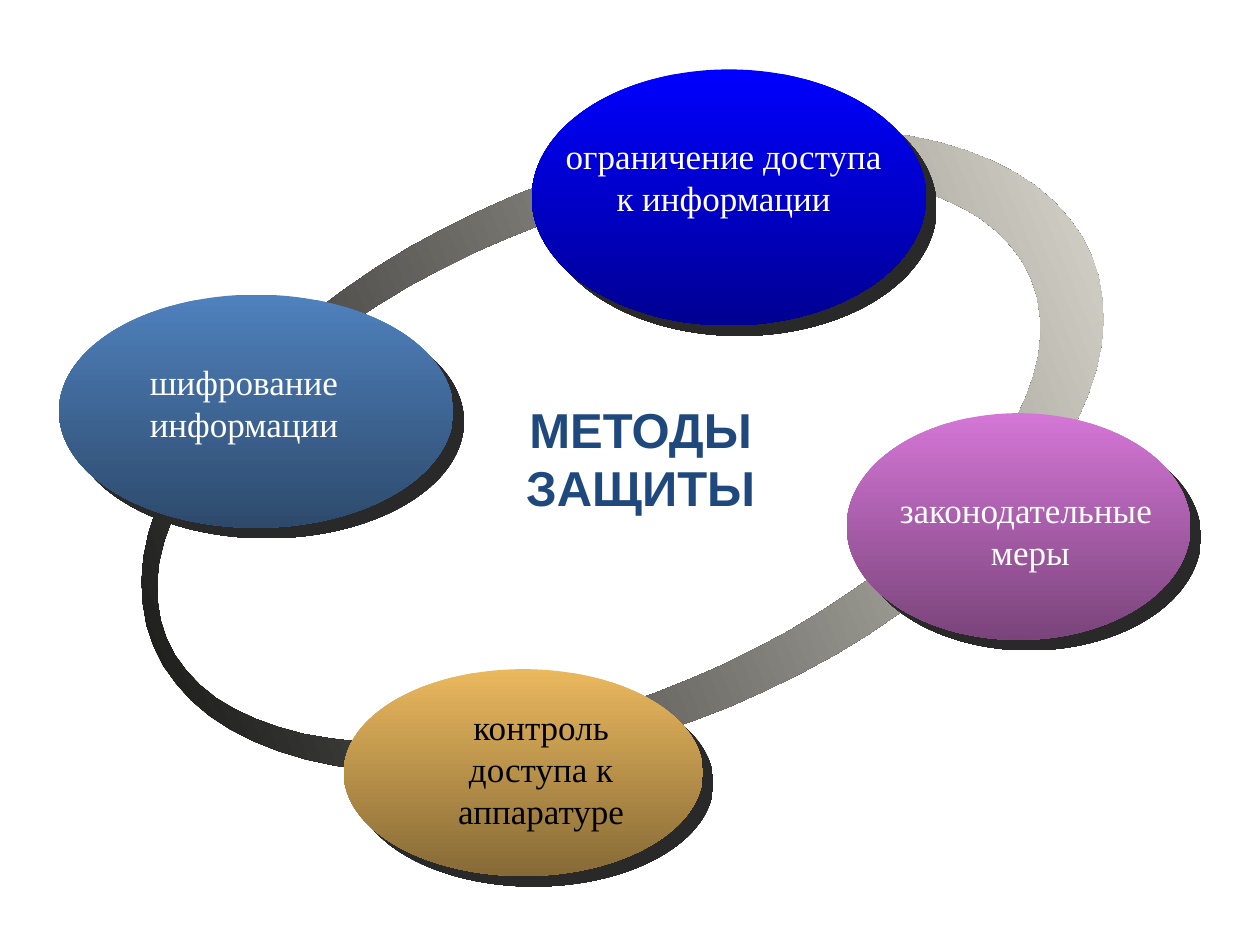
from dataclasses import dataclass
from math import cos, pi, sin

from lxml.etree import SubElement as Sub
from pptx import Presentation as Deck
from pptx.dml.color import RGBColor as Rgb
from pptx.enum.shapes import MSO_SHAPE as Kind
from pptx.enum.text import MSO_AUTO_SIZE as Fit, PP_ALIGN as Align
from pptx.oxml.ns import qn
from pptx.util import Cm, Pt


@dataclass(frozen=True)
class Theme:
    white: str = "FFFFFF"
    black: str = "000000"
    navy: str = "1F497D"
    sand: str = "EEECE1"
    blue: str = "0000FF"
    steel: str = "4F81BD"
    gold: str = "EAB85E"
    pink: str = "D476D6"
    shadow: str = "292929"
    shade: int = 28200
    serif: str = "Times New Roman"
    sans: str = "Arial"
    body: int = 20
    head: int = 28


class Page:
    def __init__(self, deck, theme):
        self.theme = theme
        self.shapes = deck.slides.add_slide(deck.slide_layouts[6]).shapes

    def paint(self, shape, first, last, angle):
        """Fill with a two-colour gradient, without line or shadow."""
        shape.shadow.inherit = False
        shape.line.fill.background()
        shape.fill.gradient()
        shape.fill.gradient_angle = angle
        for stop, tint in zip(shape.fill.gradient_stops, (first, last)):
            stop.color.rgb = Rgb.from_string(tint)

    def cast(self, parent, tint, dist):
        """Add a hard shadow to the lower right."""
        drop = Sub(parent, qn("a:outerShdw"), blurRad="0", dist=str(Pt(dist)),
                   dir="2700000", algn="ctr", rotWithShape="0")
        Sub(drop, qn("a:srgbClr"), val=tint)

    def ring(self, x, y, outer, inner, turn):
        """Draw a band between two ellipses, each (dx, dy, rx, ry) from x, y."""
        def curve(dx, dy, rx, ry, way, count=80):
            steps = [way * 2 * pi * i / count for i in range(count)]
            return [(round(100 * (x + dx + rx * cos(t))),
                     round(100 * (y + dy + ry * sin(t)))) for t in steps]

        rim, hole = curve(*outer, 1), curve(*inner, -1)
        pen = self.shapes.build_freeform(*rim[0], scale=Cm(0.01))
        pen.add_line_segments(rim[1:], close=True)
        pen.move_to(*hole[0])
        pen.add_line_segments(hole[1:], close=True)
        band = pen.convert_to_shape()
        band.rotation = turn
        self.paint(band, self.theme.black, self.theme.sand, 0)

    def oval(self, box, tint):
        shape = self.shapes.add_shape(Kind.OVAL, *map(Cm, box))
        self.paint(shape, tint, tint, 270)
        dark = shape.fill.gradient_stops[1]
        color = dark._gs.find(qn("a:srgbClr"))
        Sub(color, qn("a:shade"), val=str(self.theme.shade))
        self.cast(shape._element.spPr.find(qn("a:effectLst")),
                  self.theme.shadow, 8.5)

    def text(self, box, lines, tint, align=Align.CENTER, wrap=True, head=False):
        frame = self.shapes.add_textbox(*map(Cm, box)).text_frame
        frame.word_wrap = wrap
        frame.auto_size = Fit.SHAPE_TO_FIT_TEXT
        frame.text = lines
        theme = self.theme
        style = {"name": theme.sans if head else theme.serif,
                 "size": Pt(theme.head if head else theme.body),
                 "bold": head}
        for para in frame.paragraphs:
            para.alignment = align
            font = para.runs[0].font
            for key, value in style.items():
                setattr(font, key, value)
            font.color.rgb = Rgb.from_string(tint)
            if head:
                glow = font._element.makeelement(qn("a:effectLst"))
                font._element.find(qn("a:solidFill")).addnext(glow)
                self.cast(glow, theme.black, 3)


def main():
    deck = Deck()
    deck.slide_width, deck.slide_height = Cm(25.4), Cm(19.05)
    theme = Theme()
    page = Page(deck, theme)

    page.ring(12.55, 9.09, (0, 0, 10.24, 5.59), (-0.5, -0.04, 9.44, 4.81), 337.4)

    for box, tint in (
        ((10.72, 1.4, 7.95, 5.16), theme.blue),
        ((1.19, 5.94, 7.95, 4.7), theme.steel),
        ((6.93, 13.49, 7.24, 4.17), theme.gold),
        ((17.07, 8.33, 6.93, 4.57), theme.pink),
    ):
        page.oval(box, tint)

    page.text((10.92, 2.59, 7.34, 1.96), "ограничение доступа к информации",
              theme.white)
    page.text((17.86, 9.73, 5.82, 1.96), "законодательные \nмеры",
              theme.white, wrap=False)
    page.text((8.13, 14.1, 5.56, 2.82), "контроль доступа к аппаратуре",
              theme.black)
    page.text((9.32, 7.92, 7.19, 2.64), "МЕТОДЫ ЗАЩИТЫ", theme.navy, head=True)
    page.text((2.77, 7.14, 4.95, 1.96), "шифрование информации",
              theme.white, align=Align.LEFT)
    deck.save("out.pptx")


if __name__ == "__main__":
    main()
